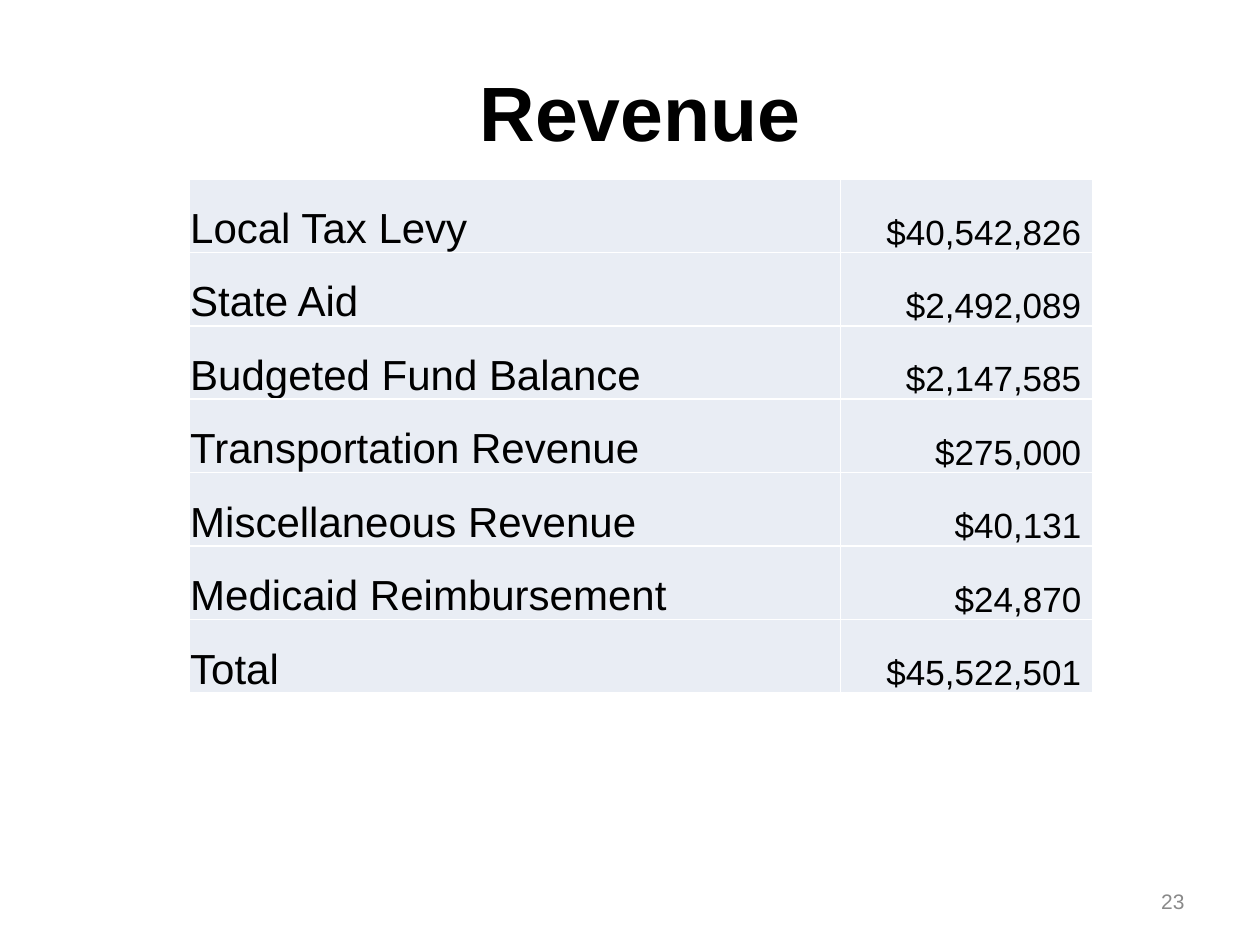
from lxml.etree import SubElement
from pptx import Presentation
from pptx.dml.color import RGBColor
from pptx.enum.text import MSO_ANCHOR as Anchor, PP_ALIGN as Align
from pptx.oxml.ns import qn
from pptx.util import Inches, Pt

REVENUES = [
    ("Local Tax Levy", "$40,542,826 "),
    ("State Aid", "$2,492,089 "),
    ("Budgeted Fund Balance", "$2,147,585 "),
    ("Transportation Revenue", "$275,000 "),
    ("Miscellaneous Revenue", "$40,131 "),
    ("Medicaid Reimbursement", "$24,870 "),
    ("Total", "$45,522,501 "),
]


def paint(target, color):
    """Give a fill a solid colour."""
    target.solid()
    target.fore_color.rgb = RGBColor.from_string(color)


def write(frame, text, size=20, color="000000", bold=False, align=Align.LEFT):
    para = frame.paragraphs[0]
    para.alignment = align
    span = para.add_run()
    span.text = text
    span.font.name = "Arial"
    span.font.size = Pt(size)
    span.font.bold = bold
    paint(span.font.fill, color)


def set_borders(cell, color, width):
    properties = cell._tc.get_or_add_tcPr()
    for side in ("a:lnL", "a:lnR", "a:lnT", "a:lnB"):
        line = SubElement(properties, qn(side), w=str(Pt(width)))
        fill = SubElement(line, qn("a:solidFill"))
        SubElement(fill, qn("a:srgbClr"), val=color)


def add_title(page, left, top, width, height):
    title = page.shapes.title
    title.left, title.top = Inches(left), Inches(top)
    title.width, title.height = Inches(width), Inches(height)
    title.text_frame.vertical_anchor = Anchor.MIDDLE
    write(title.text_frame, "Revenue", size=44, bold=True, align=Align.CENTER)


def add_revenue_table(page, left, top, width, height):
    table = page.shapes.add_table(
        len(REVENUES), 2, Inches(left), Inches(top), Inches(width), Inches(height)
    ).table
    table.first_row = table.horz_banding = False

    # The amounts take two inches, the labels the rest
    table.columns[0].width = Inches(width - 2)
    table.columns[1].width = Inches(2)

    formats = [dict(size=24), dict(size=20, align=Align.RIGHT)]
    for row, texts in zip(table.rows, REVENUES):
        for cell, text, style in zip(row.cells, texts, formats):
            cell.margin_left = cell.margin_right = cell.margin_top = Inches(0.01)
            cell.margin_bottom = 0
            cell.vertical_anchor = Anchor.BOTTOM
            set_borders(cell, "FFFFFF", 1)
            paint(cell.fill, "E9EDF4")
            write(cell.text_frame, text, **style)


def add_page_number(page, left, top, width, height):
    box = page.shapes.add_textbox(
        Inches(left), Inches(top), Inches(width), Inches(height)
    )
    box.text_frame.word_wrap = True
    box.text_frame.vertical_anchor = Anchor.MIDDLE
    write(box.text_frame, "23", size=12, color="898989", align=Align.RIGHT)


def main():
    deck = Presentation()
    deck.slide_width, deck.slide_height = Inches(10), Inches(7.5)
    page = deck.slides.add_slide(deck.slide_layouts[5])
    paint(page.background.fill, "FFFFFF")

    add_title(page, 0.58, 0.25, 9, 1.25)
    add_page_number(page, 7.17, 6.95, 2.33, 0.4)
    add_revenue_table(page, 1.5, 1.42, 7.17, 4.08)

    deck.save("out.pptx")


if __name__ == "__main__":
    main()
